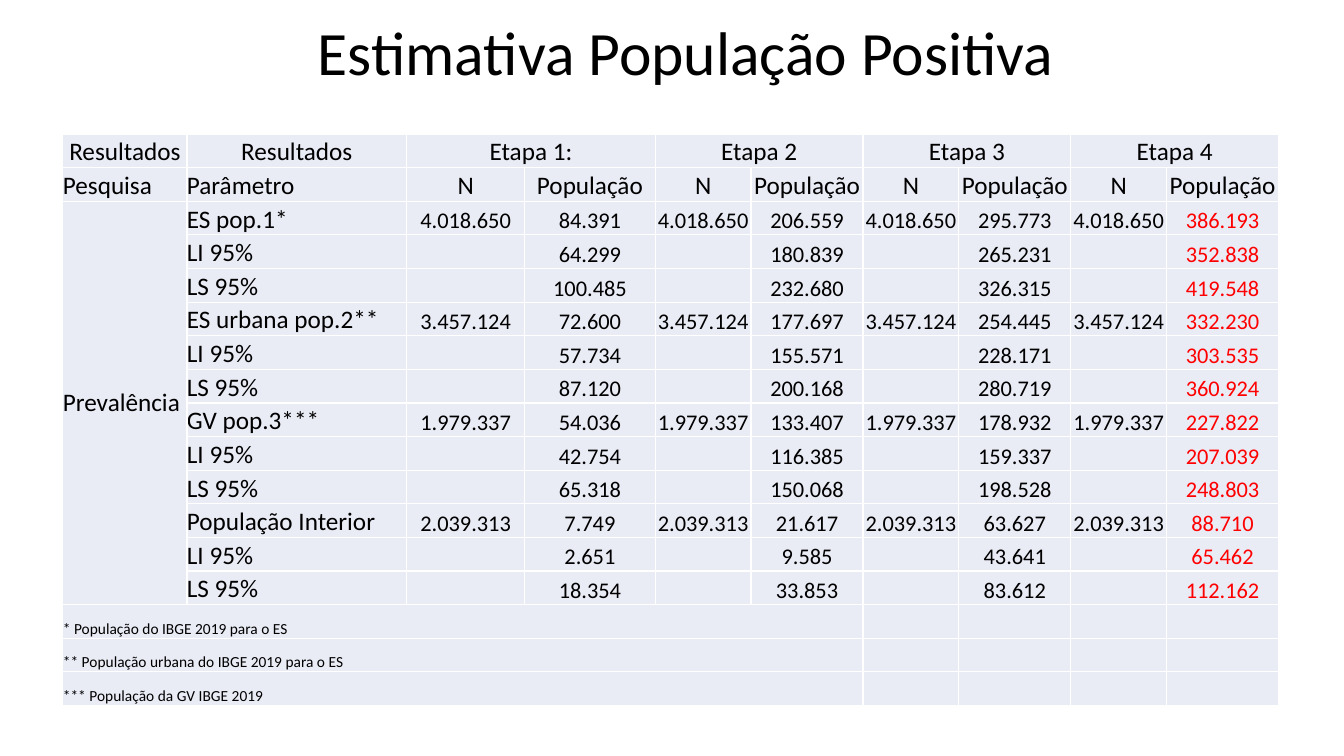
from dataclasses import dataclass

from lxml.etree import SubElement
from pptx import Presentation
from pptx.dml.color import RGBColor
from pptx.enum.text import MSO_ANCHOR, PP_ALIGN
from pptx.oxml.ns import qn
from pptx.table import Table, _Cell
from pptx.text.text import TextFrame
from pptx.util import Inches, Length, Pt

SLIDE_WIDTH, SLIDE_HEIGHT = Inches(13.333), Inches(7.5)
GRID = 100  # the slide is divided into 100 columns and 100 rows
FONT = "Calibri"
BLACK, RED, WHITE, PALE_BLUE = "000000", "FF0000", "FFFFFF", "E9EBF5"

STAGE_HEADINGS = ("Etapa 1:", "Etapa 2", "Etapa 3", "Etapa 4")
COLUMN_WIDTHS = (9.23, 16.35, 8.78, 9.72) + (7.13, 8.33) * 3
ROW_HEIGHT = 4.45
FIRST_STAGE_COLUMN = 2
FIRST_DATA_ROW = 2
FOOTNOTE_SPAN = 6


@dataclass(frozen=True)
class PopulationGroup:
    name: str
    size: str
    estimates: tuple[str, ...]
    lower_limits: tuple[str, ...]
    upper_limits: tuple[str, ...]


GROUPS = (
    PopulationGroup("ES pop.1*", "4.018.650",
                    ("84.391", "206.559", "295.773", "386.193"),
                    ("64.299", "180.839", "265.231", "352.838"),
                    ("100.485", "232.680", "326.315", "419.548")),
    PopulationGroup("ES urbana pop.2**", "3.457.124",
                    ("72.600", "177.697", "254.445", "332.230"),
                    ("57.734", "155.571", "228.171", "303.535"),
                    ("87.120", "200.168", "280.719", "360.924")),
    PopulationGroup("GV pop.3***", "1.979.337",
                    ("54.036", "133.407", "178.932", "227.822"),
                    ("42.754", "116.385", "159.337", "207.039"),
                    ("65.318", "150.068", "198.528", "248.803")),
    PopulationGroup("População Interior", "2.039.313",
                    ("7.749", "21.617", "63.627", "88.710"),
                    ("2.651", "9.585", "43.641", "65.462"),
                    ("18.354", "33.853", "83.612", "112.162")),
)
FOOTNOTES = (
    "* População do IBGE 2019 para o ES",
    "** População urbana do IBGE 2019 para o ES",
    "*** População da GV IBGE 2019",
)
DATA_ROW_COUNT = 3 * len(GROUPS)
ROW_COUNT = FIRST_DATA_ROW + DATA_ROW_COUNT + len(FOOTNOTES)


def columns(count: float) -> Length:
    return Length(round(SLIDE_WIDTH * count / GRID))


def rows(count: float) -> Length:
    return Length(round(SLIDE_HEIGHT * count / GRID))


def color(hex_value: str) -> RGBColor:
    return RGBColor.from_string(hex_value)


def write(text_frame: TextFrame, text: str, size: float, centered: bool = False,
          text_color: str = BLACK) -> None:
    text_frame.text = text
    paragraph = text_frame.paragraphs[0]
    paragraph.alignment = PP_ALIGN.CENTER if centered else PP_ALIGN.LEFT
    for run in paragraph.runs:
        run.font.name = FONT
        run.font.size = Pt(size)
        run.font.color.rgb = color(text_color)


def style_cell(cell: _Cell) -> None:
    """Give the cell white borders, a pale fill, no margins and bottom anchoring."""
    properties = cell._tc.get_or_add_tcPr()
    for side in ("a:lnL", "a:lnR", "a:lnT", "a:lnB"):
        line = SubElement(properties, qn(side), w=str(Pt(1)))
        SubElement(SubElement(line, qn("a:solidFill")), qn("a:srgbClr"), val=WHITE)
    cell.fill.solid()
    cell.fill.fore_color.rgb = color(PALE_BLUE)
    cell.margin_left = cell.margin_right = cell.margin_top = cell.margin_bottom = 0
    cell.vertical_anchor = MSO_ANCHOR.BOTTOM


def fill_headings(table: Table) -> None:
    for column in range(FIRST_STAGE_COLUMN):
        write(table.cell(0, column).text_frame, "Resultados", 18, centered=True)
    for column, heading in enumerate(("Pesquisa", "Parâmetro")):
        write(table.cell(1, column).text_frame, heading, 18)
    for stage, heading in enumerate(STAGE_HEADINGS):
        column = FIRST_STAGE_COLUMN + 2 * stage
        table.cell(0, column).merge(table.cell(0, column + 1))
        write(table.cell(0, column).text_frame, heading, 18, centered=True)
        write(table.cell(1, column).text_frame, "N", 18, centered=True)
        write(table.cell(1, column + 1).text_frame, "População", 18, centered=True)


def fill_group(table: Table, first_row: int, group: PopulationGroup) -> None:
    lines = ((group.name, group.estimates), ("LI 95%", group.lower_limits),
             ("LS 95%", group.upper_limits))
    for row, (label, values) in enumerate(lines, start=first_row):
        write(table.cell(row, 1).text_frame, label, 18)
        for stage, value in enumerate(values):
            column = FIRST_STAGE_COLUMN + 2 * stage
            value_color = RED if stage == len(values) - 1 else BLACK
            write(table.cell(row, column + 1).text_frame, value, 16, True, value_color)
            if row == first_row:
                write(table.cell(row, column).text_frame, group.size, 16, True)


def main() -> None:
    presentation = Presentation()
    presentation.slide_width, presentation.slide_height = SLIDE_WIDTH, SLIDE_HEIGHT
    slide = presentation.slides.add_slide(presentation.slide_layouts[6])

    title = slide.shapes.add_textbox(columns(8.93), 0, columns(84.23), rows(14.67))
    title.text_frame.word_wrap = True
    title.text_frame.vertical_anchor = MSO_ANCHOR.MIDDLE
    write(title.text_frame, "Estimativa População Positiva", 44, centered=True)
    title.text_frame.paragraphs[0].line_spacing = 0.9

    table = slide.shapes.add_table(
        ROW_COUNT, len(COLUMN_WIDTHS), columns(4.68), rows(17.73),
        columns(sum(COLUMN_WIDTHS)), rows(ROW_HEIGHT * ROW_COUNT)).table
    table.first_row = table.horz_banding = False
    for column, width in zip(table.columns, COLUMN_WIDTHS):
        column.width = columns(width)
    for row in table.rows:
        row.height = rows(ROW_HEIGHT)
    for cell in table.iter_cells():
        style_cell(cell)

    fill_headings(table)
    for index, group in enumerate(GROUPS):
        fill_group(table, FIRST_DATA_ROW + 3 * index, group)

    first_footnote_row = FIRST_DATA_ROW + DATA_ROW_COUNT
    survey = table.cell(FIRST_DATA_ROW, 0)
    survey.merge(table.cell(first_footnote_row - 1, 0))
    survey.vertical_anchor = MSO_ANCHOR.MIDDLE
    write(survey.text_frame, "Prevalência", 18)

    for row, footnote in enumerate(FOOTNOTES, start=first_footnote_row):
        table.cell(row, 0).merge(table.cell(row, FOOTNOTE_SPAN - 1))
        write(table.cell(row, 0).text_frame, footnote, 11)

    presentation.save("out.pptx")


if __name__ == "__main__":
    main()
